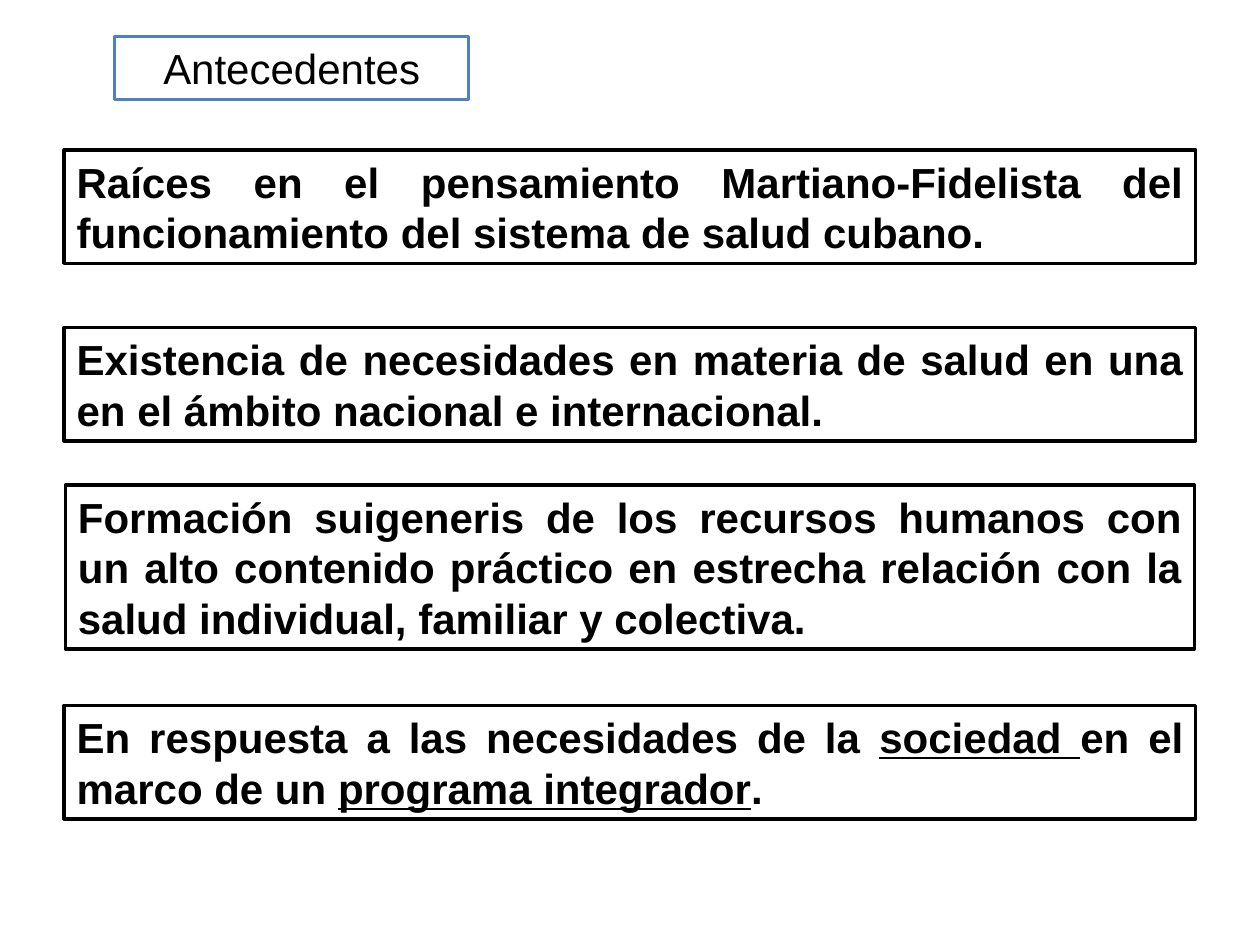
from pptx import Presentation
from pptx.dml.color import RGBColor
from pptx.enum.shapes import MSO_SHAPE
from pptx.enum.text import MSO_ANCHOR, MSO_AUTO_SIZE, PP_ALIGN
from pptx.util import Inches, Pt

BLACK = RGBColor(0x00, 0x00, 0x00)
WHITE = RGBColor(0xFF, 0xFF, 0xFF)
BLUE = RGBColor(0x4F, 0x81, 0xBD)

SLIDE_WIDTH, SLIDE_HEIGHT = 10, 7.5
LINE_HEIGHT, PADDING = 0.4, 0.1

# Content: text pieces as (text, underlined)
HEADING = [("Antecedentes", False)]

# Each statement: top, side margin, number of lines, text pieces
STATEMENTS = [
    (1.19, 0.51, 2, [("Raíces en el pensamiento Martiano-Fidelista del "
                      "funcionamiento del sistema de salud cubano.", False)]),
    (2.6, 0.51, 2, [("Existencia de necesidades en materia de salud en una "
                     "en el ámbito nacional e internacional.", False)]),
    (3.85, 0.52, 3, [("Formación suigeneris de los recursos humanos con un alto "
                      "contenido práctico en estrecha relación con la salud "
                      "individual, familiar y colectiva.", False)]),
    (5.6, 0.51, 2, [("En respuesta a las necesidades de la ", False),
                    ("sociedad ", True),
                    ("en el marco de un ", False),
                    ("programa integrador", True),
                    (".", False)]),
]


def add_framed_text(slide, left, top, width, lines, pieces, border, align, bold):
    height = lines * LINE_HEIGHT + PADDING
    frame = slide.shapes.add_shape(MSO_SHAPE.RECTANGLE, Inches(left), Inches(top),
                                   Inches(width), Inches(height))
    frame.shadow.inherit = False
    frame.fill.solid()
    frame.fill.fore_color.rgb = WHITE
    frame.line.color.rgb = border
    frame.line.width = Pt(2)

    text_frame = frame.text_frame
    text_frame.word_wrap = True
    text_frame.auto_size = MSO_AUTO_SIZE.SHAPE_TO_FIT_TEXT
    text_frame.vertical_anchor = MSO_ANCHOR.TOP
    paragraph = text_frame.paragraphs[0]
    paragraph.alignment = align
    for text, underlined in pieces:
        run = paragraph.add_run()
        run.text = text
        run.font.name = "Arial"
        run.font.size = Pt(24)
        run.font.bold = bold
        run.font.underline = underlined
        run.font.color.rgb = BLACK


def main():
    presentation = Presentation()
    presentation.slide_width = Inches(SLIDE_WIDTH)
    presentation.slide_height = Inches(SLIDE_HEIGHT)
    slide = presentation.slides.add_slide(presentation.slide_layouts[6])

    # Heading
    add_framed_text(slide, 0.91, 0.29, 2.81, 1, HEADING, BLUE, PP_ALIGN.CENTER, False)

    # Statements, centred across the slide
    for top, margin, lines, pieces in STATEMENTS:
        add_framed_text(slide, margin, top, SLIDE_WIDTH - 2 * margin, lines, pieces,
                        BLACK, PP_ALIGN.JUSTIFY, True)

    presentation.save("out.pptx")


if __name__ == "__main__":
    main()
